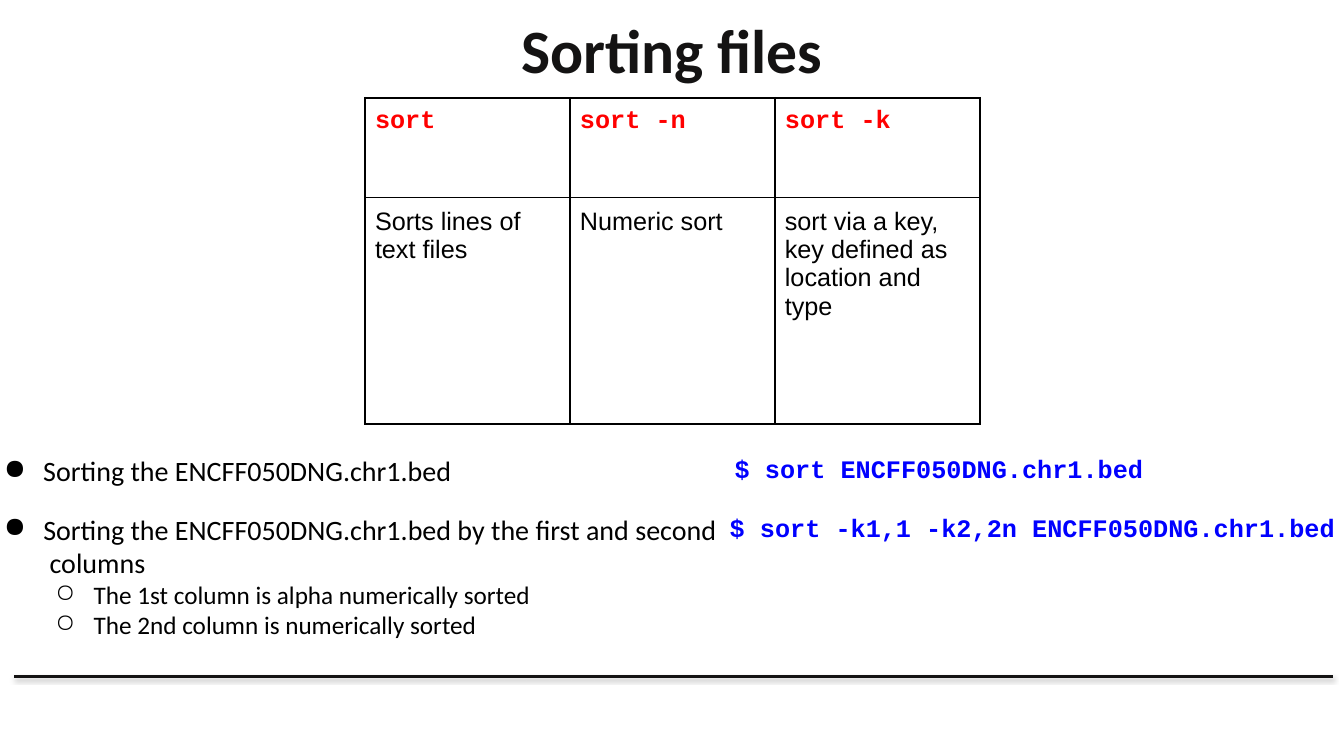
"""Build the slide on sorting files with the sort command."""
from lxml.etree import SubElement
from pptx import Presentation
from pptx.dml.color import RGBColor
from pptx.enum.shapes import MSO_CONNECTOR
from pptx.enum.text import MSO_ANCHOR, PP_ALIGN
from pptx.oxml import parse_xml
from pptx.oxml.ns import nsdecls, qn
from pptx.util import Inches, Pt

COLORS = {"ink": "141313", "text": "000000", "option": "FF0000", "command": "0000FF"}

presentation = Presentation()
presentation.slide_width = Inches(13.33)
presentation.slide_height = Inches(7.5)
slide = presentation.slides.add_slide(presentation.slide_layouts[6])
column = presentation.slide_width / 100
row = presentation.slide_height / 100


def format_paragraph(paragraph, size, font, color, bold=False):
    for run in paragraph.runs:
        run.font.size = Pt(size)
        run.font.name = font
        run.font.bold = bold
        run.font.color.rgb = RGBColor.from_string(COLORS[color])


def add_text_frame(left, top, width, height, margin=0.1):
    box = slide.shapes.add_textbox(
        int(left * column), int(top * row), int(width * column), int(height * row)
    )
    text_frame = box.text_frame
    text_frame.word_wrap = True
    text_frame.margin_left = text_frame.margin_right = Inches(0.1)
    text_frame.margin_top = text_frame.margin_bottom = Inches(margin)
    return text_frame


rule = slide.shapes.add_connector(
    MSO_CONNECTOR.STRAIGHT,
    int(1.05 * column), int(89.5 * row), int(99.2 * column), int(89.5 * row),
)
rule.line.width = Pt(2)
rule.line.color.rgb = RGBColor.from_string(COLORS["ink"])
rule._element.spPr.append(parse_xml(
    f'<a:effectLst {nsdecls("a")}>'
    f'<a:outerShdw blurRad="{Pt(3.1)}" dist="{Pt(1.6)}" dir="5400000" rotWithShape="0">'
    f'<a:srgbClr val="{COLORS["text"]}"><a:alpha val="38000"/></a:srgbClr>'
    '</a:outerShdw></a:effectLst>'
))

title = add_text_frame(5, 0.1, 90, 12.8, margin=0.05)
title.vertical_anchor = MSO_ANCHOR.MIDDLE
title.text = "Sorting files"
title.paragraphs[0].alignment = PP_ALIGN.CENTER
format_paragraph(title.paragraphs[0], 44, "Calibri", "ink", True)

options = [
    ("sort", "Sorts lines of text files"),
    ("sort -n", "Numeric sort"),
    ("sort -k", "sort via a key, key defined as location and type"),
]
table = slide.shapes.add_table(
    2, len(options),
    int(27.15 * column), int(12.93 * row), int(45.75 * column), int(43.2 * row),
).table
table.first_row = False
table.horz_banding = False
for table_row, height in zip(table.rows, (13.2, 30)):
    table_row.height = int(height * row)
for column_index, option in enumerate(options):
    table.columns[column_index].width = int(15.25 * column)
    for row_index, text in enumerate(option):
        cell = table.cell(row_index, column_index)
        cell.margin_left = cell.margin_right = Inches(0.1)
        cell.margin_top = cell.margin_bottom = Inches(0.1)
        cell.fill.background()
        cell.text = text
        font, color = (("Courier New", "option"), ("Arial", "text"))[row_index]
        format_paragraph(cell.text_frame.paragraphs[0], 18, font, color, row_index == 0)
        properties = cell._tc.get_or_add_tcPr()
        for position, side in enumerate(("lnL", "lnR", "lnT", "lnB")):
            properties.insert(position, parse_xml(
                f'<a:{side} {nsdecls("a")} w="{Pt(1.5)}"><a:solidFill>'
                f'<a:srgbClr val="{COLORS["text"]}"/></a:solidFill></a:{side}>'
            ))

commands = [
    (53.93, 58.67, 45.4, "$ sort ENCFF050DNG.chr1.bed"),
    (53.55, 66.4, 47.1, "$ sort -k1,1 -k2,2n ENCFF050DNG.chr1.bed"),
]
for left, top, width, text in commands:
    command = add_text_frame(left, top, width, 7.6)
    command.text = text
    format_paragraph(command.paragraphs[0], 18, "Courier New", "command", True)

explanations = [
    (58.67, 51.25, 7.6, [(0, "Sorting the ENCFF050DNG.chr1.bed")]),
    (66.4, 55.4, 22.4, [
        (0, "Sorting the ENCFF050DNG.chr1.bed by the first and second  columns"),
        (1, "The 1st column is alpha numerically sorted"),
        (1, "The 2nd column is numerically sorted"),
    ]),
]
bullet_levels = [("●", 20, 0.5, -0.39), ("○", 18, 1, -0.38)]
for top, width, height, items in explanations:
    explanation = add_text_frame(-1.27, top, width, height)
    explanation.text = "\n".join(text for level, text in items)
    for paragraph, (level, text) in zip(explanation.paragraphs, items):
        bullet, size, margin, indent = bullet_levels[level]
        paragraph.level = level
        format_paragraph(paragraph, size, "Calibri", "text")
        properties = paragraph._p.get_or_add_pPr()
        properties.set("marL", str(Inches(margin)))
        properties.set("indent", str(Inches(indent)))
        bullet_color = SubElement(properties, qn("a:buClr"))
        SubElement(bullet_color, qn("a:srgbClr"), val=COLORS["text"])
        SubElement(properties, qn("a:buChar"), char=bullet)

presentation.save("out.pptx")
